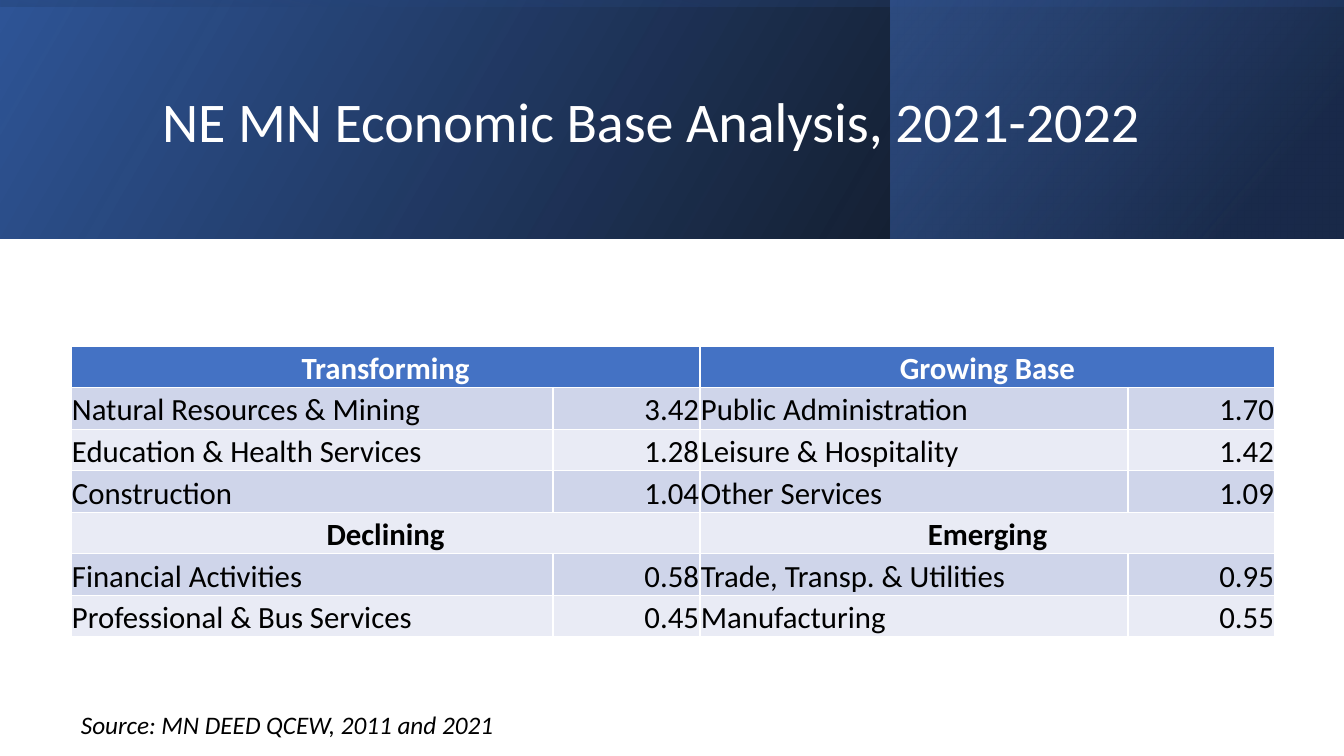
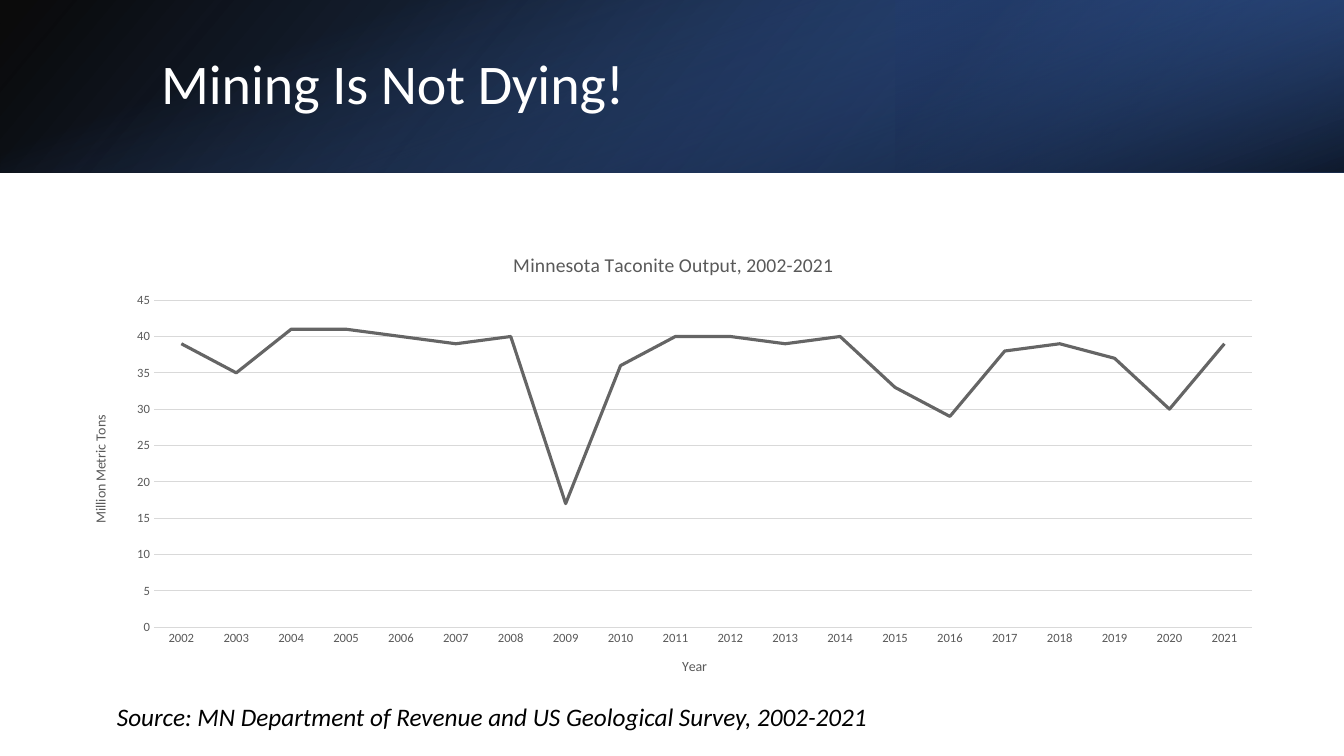
from lxml.etree import SubElement
from pptx import Presentation
from pptx.chart.data import CategoryChartData
from pptx.dml.color import RGBColor
from pptx.enum.chart import XL_CHART_TYPE as ChartType, XL_MARKER_STYLE as Marker, XL_TICK_MARK as Tick
from pptx.enum.shapes import MSO_SHAPE as Shape
from pptx.enum.text import MSO_ANCHOR as Anchor, MSO_AUTO_SIZE as AutoSize, PP_ALIGN as Align
from pptx.oxml.ns import qn
from pptx.util import Pt

PX = 914400 / 100.8
SLIDE_W, SLIDE_H = 1344, 756
FONT = "Calibri"

WHITE = RGBColor(0xFF, 0xFF, 0xFF)
BLACK = RGBColor(0x00, 0x00, 0x00)
BLUE = RGBColor(0x44, 0x72, 0xC4)
MID_BLUE = RGBColor(0x2F, 0x55, 0x97)
NAVY = RGBColor(0x20, 0x38, 0x64)
ROW_DARK = RGBColor(0xCF, 0xD5, 0xEA)
ROW_LIGHT = RGBColor(0xE9, 0xEB, 0xF5)
CHART_TEXT = RGBColor(0x59, 0x59, 0x59)
GRID_GREY = RGBColor(0xD9, 0xD9, 0xD9)
LINE_GREY = RGBColor(0x65, 0x65, 0x65)

# Each band: left, width, rotation, flipped, angle, stops (position %, colour, opacity %)
BASE_STOPS = [(0, BLACK, 96), (100, MID_BLUE, 100)]
ECONOMY = {
    "title": "NE MN Economic Base Analysis, 2021-2022",
    "title_box": (152, 38, 1072, 173),
    "band_height": 239,
    "bands": [
        (0, SLIDE_W, 0, True, 330, BASE_STOPS),
        (891, 452, 0, True, 320, [(19, NAVY, 68), (100, BLUE, 48)]),
        (0, SLIDE_W, 270, True, 350, [(23, MID_BLUE, 16), (99, BLACK, 45)]),
    ],
    "source": "Source: MN DEED QCEW, 2011 and 2021",
    "source_box": (71, 704, 437, 40),
}
MINING = {
    "title": "Mining Is Not Dying!",
    "title_box": (151, 38, 1107, 97),
    "band_height": 173,
    "bands": [
        (0, SLIDE_W, 0, True, 140, BASE_STOPS),
        (896, 448, 180, True, 320, [(19, NAVY, 68), (100, BLUE, 79)]),
        (0, SLIDE_W, 90, False, 340, [(23, BLUE, 0), (99, BLACK, 74)]),
    ],
    "source": "Source: MN Department of Revenue and US Geological Survey, 2002-2021",
    "source_box": (107, 696, 779, 40),
}

TABLE_BOX = (71, 346, 1204, 291)
COLUMN_WIDTHS = [482, 147, 428, 147]
INDUSTRIES = [
    ("Transforming", None, "Growing Base", None),
    ("Natural Resources & Mining", "3.42", "Public Administration", "1.70"),
    ("Education & Health Services", "1.28", "Leisure & Hospitality", "1.42"),
    ("Construction", "1.04", "Other Services", "1.09"),
    ("Declining", None, "Emerging", None),
    ("Financial Activities", "0.58", "Trade, Transp. & Utilities", "0.95"),
    ("Professional & Bus Services", "0.45", "Manufacturing", "0.55"),
]

CHART_BOX = (71, 233, 1205, 463)
CHART_TITLE = "Minnesota Taconite Output, 2002-2021"
YEARS = [str(year) for year in range(2002, 2022)]
OUTPUT = [39, 35, 41, 41, 40, 39, 40, 17, 36, 40, 40, 39, 40, 33, 29, 38, 39, 37, 30, 39]


def px(*lengths):
    return [round(length * PX) for length in lengths]


def set_font(font, size, color, bold=None, italic=None):
    font.name, font.size, font.color.rgb = FONT, Pt(size), color
    font.bold, font.italic = bold, italic


def add_band(slide, height, left, width, rotation, flipped, angle, stops):
    """Add a gradient rectangle that covers the given area once rotated."""
    w, h = (height, width) if rotation in (90, 270) else (width, height)
    box = px(left + (width - w) / 2, (height - h) / 2, w, h)
    band = slide.shapes.add_shape(Shape.RECTANGLE, *box)
    band.shadow.inherit = False
    band.line.fill.background()
    band.rotation = rotation
    if flipped:
        band._element.spPr.find(qn("a:xfrm")).set("flipH", "1")
    band.fill.gradient()
    band.fill.gradient_angle = 360 - angle
    for stop, (position, color, _) in zip(band.fill.gradient_stops, stops):
        stop.position, stop.color.rgb = position / 100, color
    for color, (_, _, opacity) in zip(band._element.spPr.iter(qn("a:srgbClr")), stops):
        SubElement(color, qn("a:alpha")).set("val", str(opacity * 1000))


def add_slide(deck, content):
    """Add a slide with its header bands, title and source line."""
    slide = deck.slides.add_slide(deck.slide_layouts[5])
    for band in content["bands"]:
        add_band(slide, content["band_height"], *band)

    title = slide.shapes.title
    slide.shapes._spTree.append(title._element)  # in front of the bands
    title.left, title.top, title.width, title.height = px(*content["title_box"])
    title.text_frame.text = content["title"]
    title.text_frame.word_wrap = True
    title.text_frame.vertical_anchor = Anchor.MIDDLE
    heading = title.text_frame.paragraphs[0]
    heading.alignment, heading.line_spacing = Align.LEFT, 0.9
    set_font(heading.font, 40, WHITE)

    source = slide.shapes.add_textbox(*px(*content["source_box"])).text_frame
    source.word_wrap = False
    source.auto_size = AutoSize.SHAPE_TO_FIT_TEXT
    source.text = content["source"]
    set_font(source.paragraphs[0].font, 18, BLACK, italic=True)
    return slide


def add_industry_table(slide):
    table = slide.shapes.add_table(len(INDUSTRIES), len(COLUMN_WIDTHS), *px(*TABLE_BOX)).table
    for column, width in zip(table.columns, COLUMN_WIDTHS):
        column.width = px(width)[0]
    for r, values in enumerate(INDUSTRIES):
        is_heading = values[1] is None
        fill = BLUE if r == 0 else ROW_DARK if r % 2 else ROW_LIGHT
        for c, value in enumerate(values):
            cell = table.cell(r, c)
            cell.fill.solid()
            cell.fill.fore_color.rgb = fill
            if value is None:
                table.cell(r, c - 1).merge(cell)
                continue
            cell.margin_left = cell.margin_top = cell.margin_right = px(1)[0]
            cell.margin_bottom = 0
            cell.vertical_anchor = Anchor.BOTTOM
            cell.text = value
            entry = cell.text_frame.paragraphs[0]
            entry.alignment = Align.CENTER if is_heading else Align.RIGHT if c % 2 else Align.LEFT
            set_font(entry.font, 22, BLACK if r else WHITE, bold=is_heading)


def set_chart_title(owner, text, size):
    """Title a chart or an axis."""
    frame = (owner.chart_title if hasattr(owner, "chart_title") else owner.axis_title).text_frame
    frame.text = text
    set_font(frame.paragraphs[0].font, size, CHART_TEXT, bold=False)


def add_output_chart(slide):
    data = CategoryChartData()
    data.categories = YEARS
    data.add_series("Series 1", OUTPUT)
    chart = slide.shapes.add_chart(ChartType.LINE, *px(*CHART_BOX), data).chart
    set_font(chart.font, 10, BLACK)
    chart.has_legend = False
    set_chart_title(chart, CHART_TITLE, 14)

    years, tons = chart.category_axis, chart.value_axis
    for axis, name in ((years, "Year"), (tons, "Million Metric Tons")):
        axis.major_tick_mark = axis.minor_tick_mark = Tick.NONE
        set_font(axis.tick_labels.font, 9, CHART_TEXT)
        set_chart_title(axis, name, 10)
    tons.has_major_gridlines = True
    tons.minimum_scale, tons.maximum_scale, tons.major_unit = 0, 45, 5
    tons.format.line.fill.background()
    for line in (years.format.line, tons.major_gridlines.format.line):
        line.color.rgb, line.width = GRID_GREY, Pt(0.75)

    plot = chart.plots[0]
    plot.vary_by_categories = False
    output = plot.series[0]
    output.smooth = False
    output.marker.style = Marker.NONE
    output.format.line.color.rgb = LINE_GREY
    output.format.line.width = Pt(2.25)


def main():
    deck = Presentation()
    deck.slide_width, deck.slide_height = px(SLIDE_W, SLIDE_H)
    add_industry_table(add_slide(deck, ECONOMY))
    add_output_chart(add_slide(deck, MINING))
    deck.save("out.pptx")


if __name__ == "__main__":
    main()
